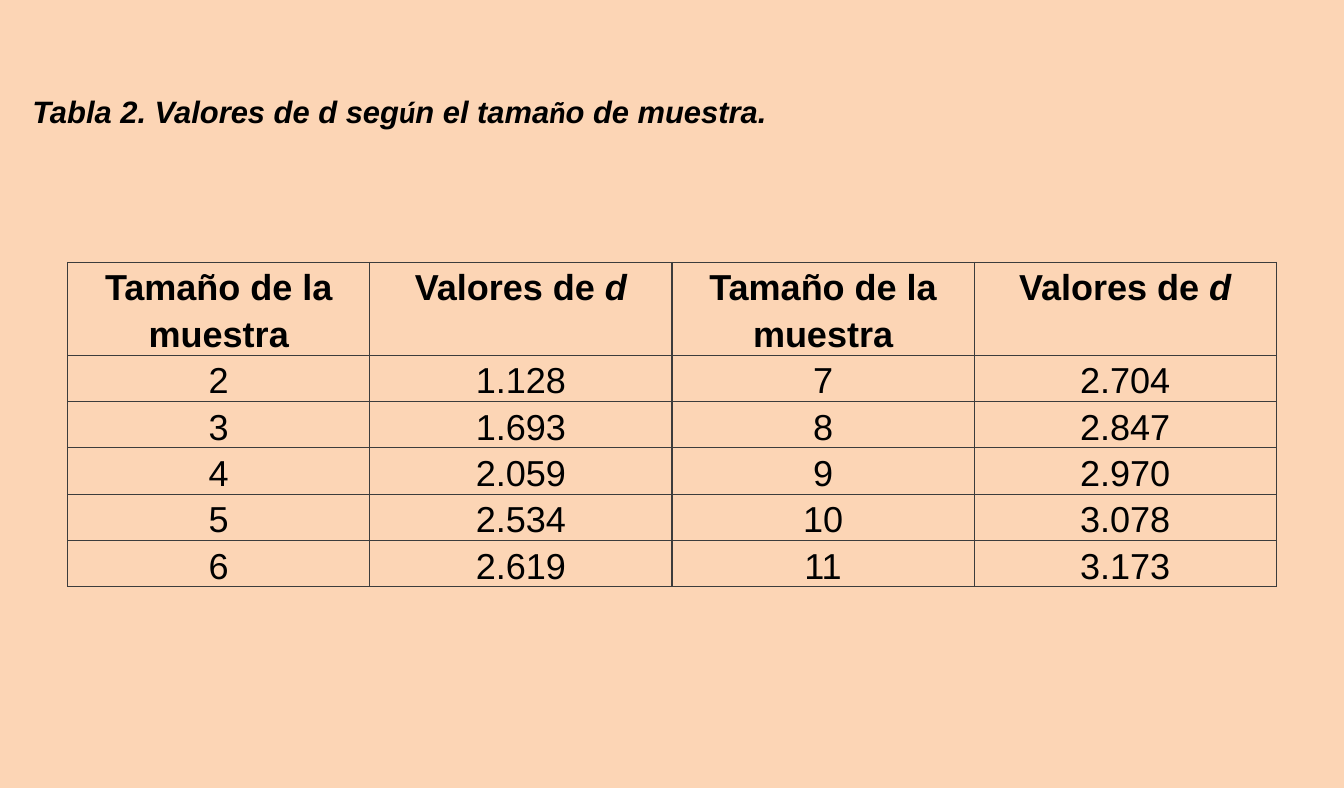
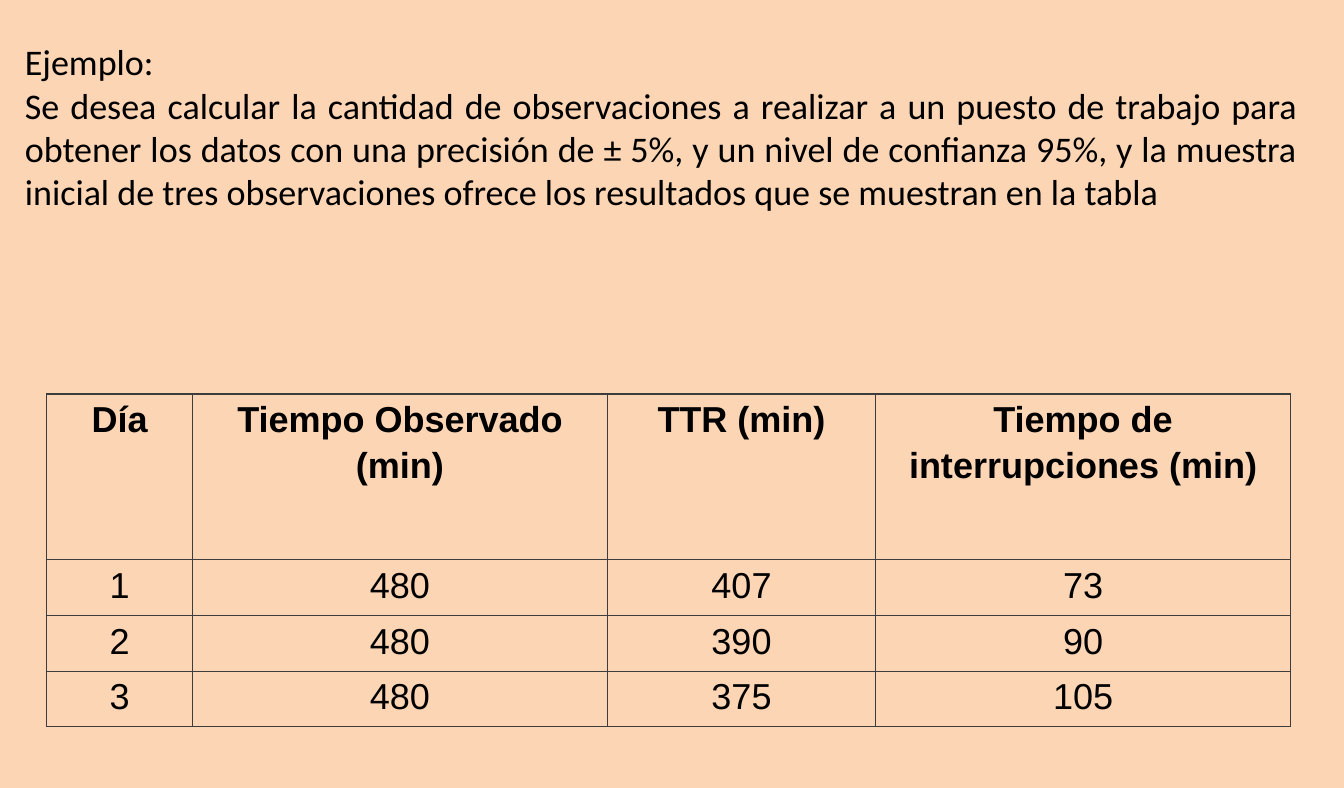
from lxml.etree import SubElement
from pptx import Presentation
from pptx.dml.color import RGBColor
from pptx.enum.text import MSO_ANCHOR, PP_ALIGN
from pptx.oxml.ns import qn
from pptx.util import Pt

PX = 9144  # EMU per px, 100 px to the inch
WIDTH, HEIGHT = 1450, 850
PEACH = RGBColor(0xFC, 0xD5, 0xB5)
BLACK = RGBColor(0, 0, 0)
GREY = RGBColor(0x3C, 0x3C, 0x3C)

BODY = {"name": "Calibri", "size": Pt(28)}
CELL = {"name": "Arial", "size": Pt(28), "bold": False}
HEAD = {**CELL, "bold": True}
TITLE = {"name": "Arial", "size": Pt(24), "bold": True, "italic": True}
ACCENT = {"name": "Calibri"}

VALORES = [("Valores de ", {}), ("d", {"italic": True})]
D_VALUES = [
    ["Tamaño de la muestra", VALORES] * 2,
    ["2", "1.128", "7", "2.704"],
    ["3", "1.693", "8", "2.847"],
    ["4", "2.059", "9", "2.970"],
    ["5", "2.534", "10", "3.078"],
    ["6", "2.619", "11", "3.173"],
]
OBSERVATIONS = [
    ["Día", "Tiempo Observado (min)", "TTR (min)", "Tiempo de interrupciones (min)"],
    ["1", "480", "407", "73"],
    ["2", "480", "390", "90"],
    ["3", "480", "375", "105"],
]
TABLE_TITLE = [("Tabla 2. Valores de d seg", {}), ("ú", ACCENT), ("n el tama", {}),
               ("ñ", ACCENT), ("o de muestra.", {})]
EXAMPLE = [
    "Ejemplo:",
    "Se desea calcular la cantidad de observaciones a realizar a un puesto de trabajo "
    "para obtener los datos con una precisión de ± 5%, y un nivel de confianza 95%, y la "
    "muestra inicial de tres observaciones ofrece los resultados que se muestran en la tabla",
]


def set_attrs(obj, values):
    for name, value in values.items():
        setattr(obj, name, value)


def write(p, content, style, align):
    """Fill a paragraph from a string or a list of (text, format changes)."""
    p.alignment = align
    for text, changes in [(content, {})] if isinstance(content, str) else content:
        r = p.add_run()
        r.text = text
        set_attrs(r.font, {**style, **changes})
        r.font.color.rgb = BLACK


def add_slide(prs):
    s = prs.slides.add_slide(prs.slide_layouts[6])
    fill = s.background.fill
    fill.solid()
    fill.fore_color.rgb = PEACH
    return s


def add_text(s, box, paragraphs, style, align=PP_ALIGN.LEFT):
    tf = s.shapes.add_textbox(*(n * PX for n in box)).text_frame
    tf.word_wrap = True
    for i, content in enumerate(paragraphs):
        write(tf.add_paragraph() if i else tf.paragraphs[0], content, style, align)


def add_borders(cell):
    tc_pr = cell._tc.get_or_add_tcPr()
    for side in ("lnL", "lnR", "lnT", "lnB"):
        line = SubElement(tc_pr, qn(f"a:{side}"), w=str(Pt(1)))
        SubElement(SubElement(line, qn("a:solidFill")), qn("a:srgbClr"), val=str(GREY))


def add_grid(s, left, top, widths, heights, rows):
    """Add a bordered table whose first row is the bold header."""
    box = left, top, sum(widths), sum(heights)
    table = s.shapes.add_table(len(rows), len(widths), *(n * PX for n in box)).table
    set_attrs(table, {"first_row": False, "horz_banding": False})
    for column, width in zip(table.columns, widths):
        column.width = width * PX
    for i, (row, height, contents) in enumerate(zip(table.rows, heights, rows)):
        row.height = height * PX
        for cell, content in zip(row.cells, contents):
            add_borders(cell)
            cell.fill.background()
            set_attrs(cell, {"margin_left": 7 * PX, "margin_right": 7 * PX,
                             "margin_top": 0, "margin_bottom": 0,
                             "vertical_anchor": MSO_ANCHOR.TOP})
            p = cell.text_frame.paragraphs[0]
            p.line_spacing = 1.15
            write(p, content, CELL if i else HEAD, PP_ALIGN.CENTER)


def d_values_slide(prs):
    s = add_slide(prs)
    add_grid(s, 73, 283, [326] * 4, [100] + [50] * 5, D_VALUES)
    add_text(s, (25, 95, 1353, 50), [TABLE_TITLE], TITLE)


def example_slide(prs):
    s = add_slide(prs)
    add_text(s, (17, 38, 1392, 200), EXAMPLE, BODY, PP_ALIGN.JUSTIFY)
    add_grid(s, 50, 425, [158, 447, 290, 447], [179] + [60] * 3, OBSERVATIONS)


def main():
    prs = Presentation()
    set_attrs(prs, {"slide_width": WIDTH * PX, "slide_height": HEIGHT * PX})
    d_values_slide(prs)
    example_slide(prs)
    prs.save("out.pptx")


if __name__ == "__main__":
    main()
